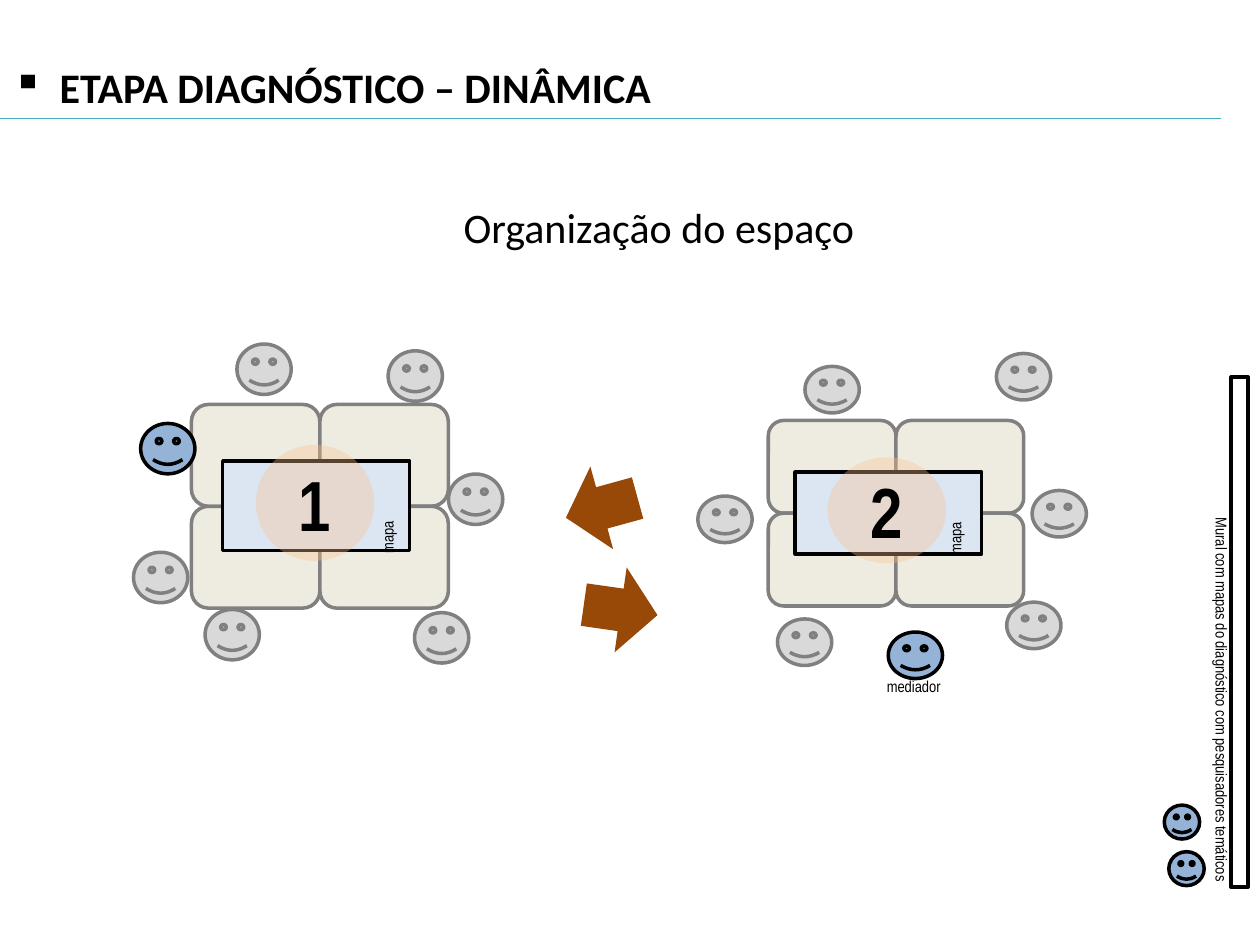
"""Build the slide showing how the two diagnostic tables are arranged."""
from dataclasses import dataclass
from typing import NamedTuple, Optional

from lxml import etree
from pptx import Presentation
from pptx import util as u
from pptx.dml.color import RGBColor
from pptx.enum import shapes, text
from pptx.oxml import ns

MSO = shapes.MSO_SHAPE


class Box(NamedTuple):
    x: float
    y: float
    w: float
    h: float

    def emu(self) -> list:
        return [u.Pt(v) for v in self]


class Paint(NamedTuple):
    fill: str
    line: Optional[str] = None


@dataclass(frozen=True)
class Theme:
    ink: str = "000000"
    rule: str = "4BACC6"
    paper: Paint = Paint("FFFFFF")
    mural: Paint = Paint("FFFFFF", "000000")
    desk: Paint = Paint("EEECE1", "808080")
    guest: Paint = Paint("D9D9D9", "808080")
    mediator: Paint = Paint("95B3D7", "000000")
    map: Paint = Paint("DCE6F2", "000000")
    disc: Paint = Paint("FAC090")
    arrow: Paint = Paint("984807")
    disc_alpha: int = 35
    line_width: float = 2
    rule_width: float = 0.75
    heading_font: str = "Calibri"
    label_font: str = "Arial Narrow"
    heading: float = 24
    number: float = 40.5
    label: float = 9


@dataclass(frozen=True)
class Table:
    number: str
    desk: Box
    face: tuple
    guests: tuple
    mediator: tuple
    map: Box
    disc: Box
    map_label: Box
    mediator_label: Optional[Box] = None


T = Theme()

TABLES = (
    Table("1", Box(109.4, 231.1, 73.4, 58.2), (31, 28.8),
          ((135.4, 196.6), (221.8, 200.5), (256.3, 270.9),
           (236.9, 350.1), (117.2, 348.3), (76.3, 315.6)),
          (80.4, 242), Box(127.3, 263.4, 106.8, 51.1),
          Box(146.2, 254.3, 67.7, 66.2), Box(200.9, 284.4, 50.4, 27.4)),
    Table("2", Box(439, 240.3, 73, 53), (31, 26.6),
          ((460, 209.4), (569.4, 202), (589.8, 280.3),
           (575.3, 344.1), (444.3, 353.7), (398.8, 283.5)),
          (507.6, 361.2), Box(454.4, 269.8, 106.6, 46.8),
          Box(473, 261.4, 67.7, 60.5), Box(527.8, 287.3, 45.4, 27.4),
          Box(499.7, 383, 69.1, 25.2)),
)


def add_run(p, words: str, font: str, size: float, bold: bool = False) -> None:
    """Append one run to a paragraph."""
    r = p.add_run()
    r.text = words
    r.font.name, r.font.size, r.font.bold = font, u.Pt(size), bold
    r.font.color.rgb = RGBColor.from_string(T.ink)


def add_preset(parent, kind, box: Box, paint: Paint, rotation: float = 0):
    """Draw a preset shape with its fill and outline."""
    sp = parent.add_shape(kind, *box.emu())
    sp.shadow.inherit = False
    sp.rotation = rotation
    sp.fill.solid()
    sp.fill.fore_color.rgb = RGBColor.from_string(paint.fill)
    if paint.line:
        sp.line.color.rgb = RGBColor.from_string(paint.line)
        sp.line.width = u.Pt(T.line_width)
    else:
        sp.line.fill.background()
    return sp


def add_label(parent, box: Box, words: str, font: str = T.label_font,
              size: float = T.label, bold: bool = False,
              rotation: float = 0, wrap: bool = False):
    """Draw a text box that grows with its single line."""
    sp = parent.add_textbox(*box.emu())
    sp.rotation = rotation
    tf = sp.text_frame
    tf.word_wrap = wrap
    tf.auto_size = text.MSO_AUTO_SIZE.SHAPE_TO_FIT_TEXT
    add_run(tf.paragraphs[0], words, font, size, bold)
    return sp


def add_disc(parent, box: Box, number: str) -> None:
    """Draw the translucent disc with the table number."""
    sp = add_preset(parent, MSO.OVAL, box, T.disc)
    color = sp.fill._xPr.find(".//" + ns.qn("a:srgbClr"))
    etree.SubElement(color, ns.qn("a:alpha"), val=str(T.disc_alpha * 1000))
    tf = sp.text_frame
    tf.vertical_anchor = text.MSO_ANCHOR.MIDDLE
    p = tf.paragraphs[0]
    p.alignment = text.PP_ALIGN.CENTER
    add_run(p, number, T.label_font, T.number, True)


def add_table_group(s, table: Table) -> None:
    """Draw four desks, the people around them and the map on top."""
    group = s.shapes.add_group_shape().shapes
    x, y, w, h = table.desk
    for row in range(2):
        for col in range(2):
            add_preset(group, MSO.ROUNDED_RECTANGLE,
                       Box(x + col * w, y + row * h, w, h), T.desk)
    for spot in table.guests:
        add_preset(group, MSO.SMILEY_FACE, Box(*spot, *table.face), T.guest)
    add_preset(group, MSO.SMILEY_FACE, Box(*table.mediator, *table.face), T.mediator)
    add_preset(group, MSO.RECTANGLE, table.map, T.map)
    add_disc(group, table.disc, table.number)
    if table.mediator_label:
        add_label(group, table.mediator_label, "mediador")
    add_label(group, table.map_label, "mapa", rotation=270)


def add_heading(s) -> None:
    """Draw the bulleted heading and the rule below it."""
    sp = add_label(s.shapes, Box(0, 31.7, 720, 36), "ETAPA DIAGNÓSTICO – DINÂMICA",
                   T.heading_font, T.heading, bold=True, wrap=True)
    pPr = sp.text_frame.paragraphs[0]._p.get_or_add_pPr()
    indent = u.Pt(27)
    pPr.set("marL", str(indent))
    pPr.set("indent", str(-indent))
    etree.SubElement(pPr, ns.qn("a:buChar"), char="▪")
    line = s.shapes.add_connector(shapes.MSO_CONNECTOR.STRAIGHT,
                                  *Box(0, 67.7, 697.5, 67.7).emu())
    line.line.color.rgb = RGBColor.from_string(T.rule)
    line.line.width = u.Pt(T.rule_width)
    etree.SubElement(line._element.spPr, ns.qn("a:effectLst"))


def add_mural(s) -> None:
    """Draw the wall panel, its caption and its two researchers."""
    add_preset(s.shapes, MSO.RECTANGLE, Box(562.5, 356.4, 291.6, 9.6), T.mural, 90)
    add_label(s.shapes, Box(585.4, 392.4, 225.4, 18),
              "Mural com mapas do diagnóstico com pesquisadores temáticos", rotation=90)
    for x, y in ((665.3, 460.1), (667.9, 486.7)):
        add_preset(s.shapes, MSO.SMILEY_FACE, Box(x, y, 20.2, 19.4), T.mediator)


def main() -> None:
    """Assemble and save the slide."""
    prs = Presentation()
    prs.slide_width, prs.slide_height = u.Pt(720), u.Pt(540)
    s = prs.slides.add_slide(prs.slide_layouts[6])
    for x, y, angle in ((333.4, 324, 8.1), (322.6, 265.7, 164.6)):
        add_preset(s.shapes, MSO.RIGHT_ARROW, Box(x, y, 42.5, 49), T.arrow, angle)
    add_label(s.shapes, Box(257.8, 111.6, 241.2, 36), "Organização do espaço",
              T.heading_font, T.heading)
    add_mural(s)
    for table in TABLES:
        add_table_group(s, table)
    add_heading(s)
    prs.save("out.pptx")


if __name__ == "__main__":
    main()
